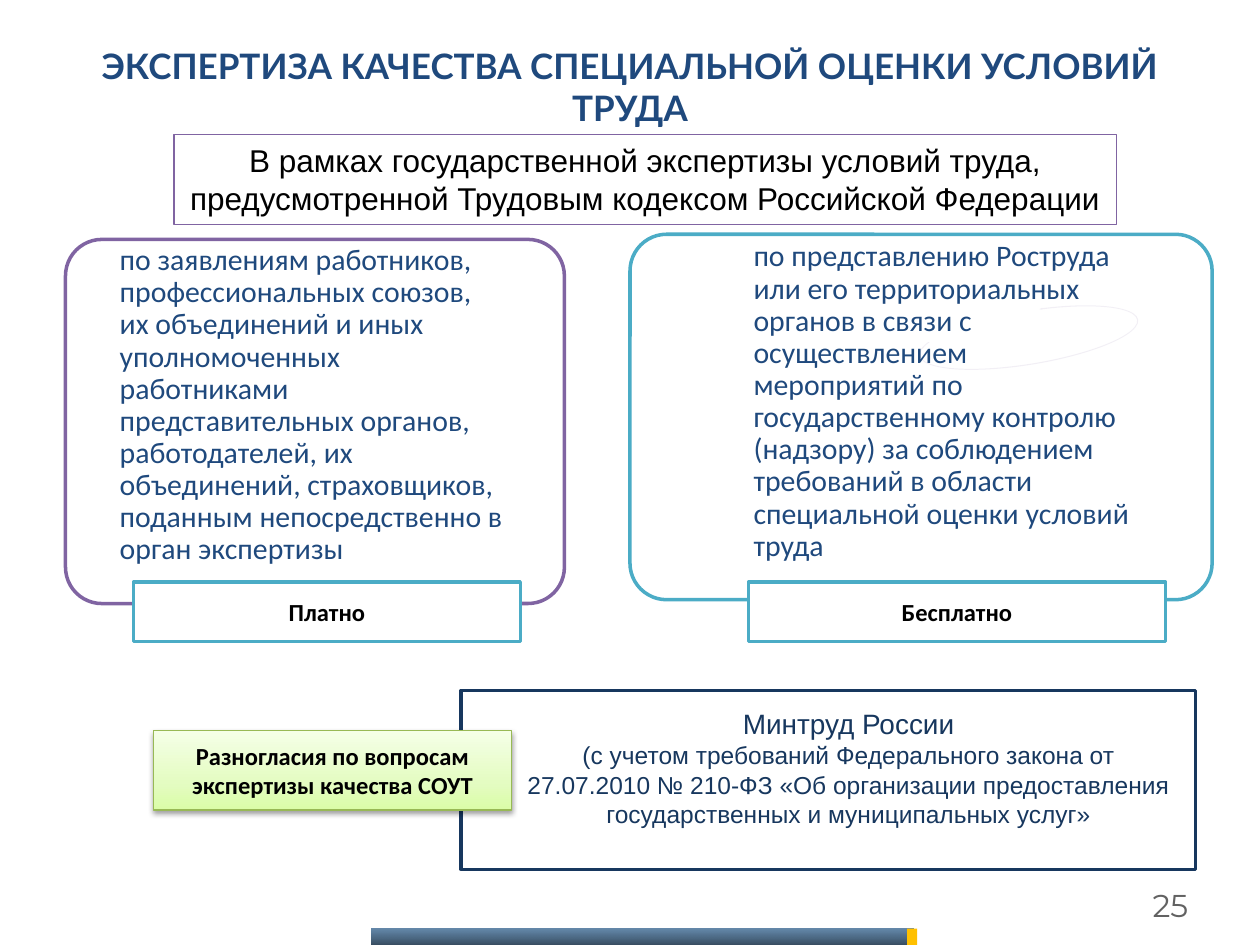
from lxml import etree
from pptx import Presentation
from pptx.dml.color import RGBColor
from pptx.enum.shapes import MSO_SHAPE
from pptx.enum.text import MSO_ANCHOR, MSO_AUTO_SIZE, PP_ALIGN
from pptx.oxml.ns import qn
from pptx.util import Inches, Pt

RECT = MSO_SHAPE.RECTANGLE
ROUNDED = MSO_SHAPE.ROUNDED_RECTANGLE
CIRCULAR_ARROW = MSO_SHAPE.CIRCULAR_ARROW
TOP, MIDDLE = MSO_ANCHOR.TOP, MSO_ANCHOR.MIDDLE
LEFT, CENTER, RIGHT = PP_ALIGN.LEFT, PP_ALIGN.CENTER, PP_ALIGN.RIGHT
NO_AUTOFIT = MSO_AUTO_SIZE.NONE
TITLE_ONLY = 5

BLUE, NAVY, BLACK, WHITE = "1F497D", "17375E", "000000", "FFFFFF"
PURPLE, TEAL, GREEN = "8064A2", "4BACC6", "98B955"


def rgb(value):
    return RGBColor.from_string(value)


def add_color(parent, value, opacity):
    color = etree.SubElement(parent, qn("a:srgbClr"), val=value)
    if opacity < 100:
        etree.SubElement(color, qn("a:alpha"), val=str(opacity * 1000))


class SlideBuilder:
    """Holds the slide and its shared text style."""

    font = "Calibri"

    def __init__(self, slide):
        self.slide = slide

    def set_text(self, frame, lines, sizes, color, font=None, bold=False,
                 align=CENTER, anchor=MIDDLE):
        frame.word_wrap = True
        frame.auto_size = NO_AUTOFIT
        frame.vertical_anchor = anchor
        frame.text = "\n".join(lines)
        for para, size in zip(frame.paragraphs, sizes):
            para.alignment = align
            for span in para.runs:
                span.font.name = font or self.font
                span.font.size = Pt(size)
                span.font.bold = bold
                span.font.color.rgb = rgb(color)

    def title(self, place, text):
        title = self.slide.shapes.title
        title.left, title.top, title.width, title.height = map(Inches, place)
        self.set_text(title.text_frame, [text], [20], BLUE, "Lato", True)

    def text(self, place, lines, sizes, color, **style):
        box = self.slide.shapes.add_textbox(*map(Inches, place))
        self.set_text(box.text_frame, lines, sizes, color, **style)
        return box

    def shape(self, kind, place, fill=None, line=None, width=2, opacity=100):
        shape = self.slide.shapes.add_shape(kind, *map(Inches, place))
        shape.shadow.inherit = False
        if fill:
            shape.fill.solid()
            shape.fill.fore_color.rgb = rgb(fill)
            if opacity < 100:
                solid = shape._element.spPr.find(qn("a:solidFill"))
                solid.clear()
                add_color(solid, fill, opacity)
        else:
            shape.fill.background()
        if line:
            shape.line.color.rgb = rgb(line)
            shape.line.width = Pt(width)
        else:
            shape.line.fill.background()
        return shape

    def gradient(self, shape, angle, stops):
        """Fill with stops of (position %, colour, opacity %)."""
        shape.fill.gradient()
        shape.fill.gradient_angle = angle
        stop_list = shape._element.spPr.find(".//" + qn("a:gsLst"))
        stop_list.clear()
        for position, color, opacity in stops:
            stop = etree.SubElement(stop_list, qn("a:gs"), pos=str(position * 1000))
            add_color(stop, color, opacity)

    def drop_shadow(self, shape):
        effects = shape._element.spPr.find(qn("a:effectLst"))
        shadow = etree.SubElement(
            effects, qn("a:outerShdw"), blurRad=str(int(Pt(3.1))),
            dist=str(int(Pt(1.6))), dir="5400000", rotWithShape="0")
        add_color(shadow, BLACK, 38)

    def panel(self, place, line):
        panel = self.shape(ROUNDED, place, WHITE, line, opacity=90)
        panel.adjustments[0] = 0.1

    def panel_text(self, left, top, text):
        box = self.text((left, top, 3.12, 1.24), [text], [17], BLUE, align=LEFT)
        frame = box.text_frame
        frame.margin_left = frame.margin_right = Inches(0.04)
        frame.margin_top = frame.margin_bottom = Inches(0.02)
        frame.paragraphs[0].line_spacing = 0.9

    def price_label(self, left, width, text):
        label = self.shape(RECT, (left, 4.62, width, 0.47), WHITE, TEAL)
        self.set_text(label.text_frame, [text], [14], BLACK, bold=True)

    def faint_arc(self):
        arc = self.shape(CIRCULAR_ARROW, (7.28, 2.46, 1.77, 0.44), PURPLE)
        for index, value in enumerate((0.02, 2.27, 33.77, 104, 0.02)):
            arc.adjustments[index] = value
        arc.rotation = 350.7
        arc._element.spPr.find(qn("a:xfrm")).set("flipV", "1")


def main():
    deck = Presentation()
    deck.slide_width, deck.slide_height = Inches(10), Inches(7.5)
    page = SlideBuilder(deck.slides.add_slide(deck.slide_layouts[TITLE_ONLY]))

    page.text((7.2, 6.98, 2.33, 0.4), ["25"], [18], "626262",
              font="Montserrat", align=RIGHT)
    page.title((0.5, 0.3, 9, 0.77),
               "ЭКСПЕРТИЗА КАЧЕСТВА СПЕЦИАЛЬНОЙ ОЦЕНКИ УСЛОВИЙ ТРУДА")
    footer_bar = page.shape(RECT, (2.95, 7.37, 4.3, 0.13))
    page.gradient(footer_bar, 270, [(0, "003C73", 60), (100, "001C35", 80)])
    page.shape(RECT, (7.2, 7.37, 0.08, 0.13), "FFC000")

    page.panel((0.52, 1.9, 3.96, 2.89), PURPLE)
    page.faint_arc()
    page.panel_text(0.91, 2.6, (
        "по заявлениям работников, профессиональных союзов, их объединений и "
        "иных уполномоченных работниками представительных органов, "
        "работодателей, их объединений, страховщиков, поданным "
        "непосредственно в орган экспертизы"))
    page.panel((5, 1.86, 4.62, 2.9), TEAL)
    page.panel_text(5.94, 2.57, (
        "по представлению Роструда или его территориальных органов в связи с "
        "осуществлением мероприятий по государственному контролю (надзору) за "
        "соблюдением требований в области специальной оценки условий труда"))

    scope = page.shape(RECT, (1.38, 1.07, 7.48, 0.71), line=PURPLE, width=0.75)
    page.set_text(scope.text_frame, [
        "В рамках государственной экспертизы условий труда, предусмотренной "
        "Трудовым кодексом Российской Федерации"],
        [18], BLACK, font="Arial", anchor=TOP)
    page.price_label(1.06, 3.07, "Платно")
    page.price_label(5.94, 3.31, "Бесплатно")

    page.shape(RECT, (3.66, 5.48, 5.83, 1.42), line=NAVY)
    disputes = page.shape(RECT, (1.22, 5.8, 2.84, 0.63), line=GREEN, width=0.75)
    page.gradient(disputes, 90, [
        (0, "DAFDA7", 100), (35, "E4FCC2", 100), (100, "F5FFE7", 100)])
    page.drop_shadow(disputes)
    page.set_text(disputes.text_frame,
                  ["Разногласия по вопросам экспертизы качества СОУТ"],
                  [14], BLACK, bold=True)
    page.text((4.06, 5.56, 5.35, 1.08), [
        "Минтруд России",
        "(с учетом требований Федерального закона от 27.07.2010 № 210-ФЗ "
        "«Об организации предоставления государственных и муниципальных услуг»"],
        [16, 14], NAVY, font="Arial", anchor=TOP)

    deck.save("out.pptx")


if __name__ == "__main__":
    main()
